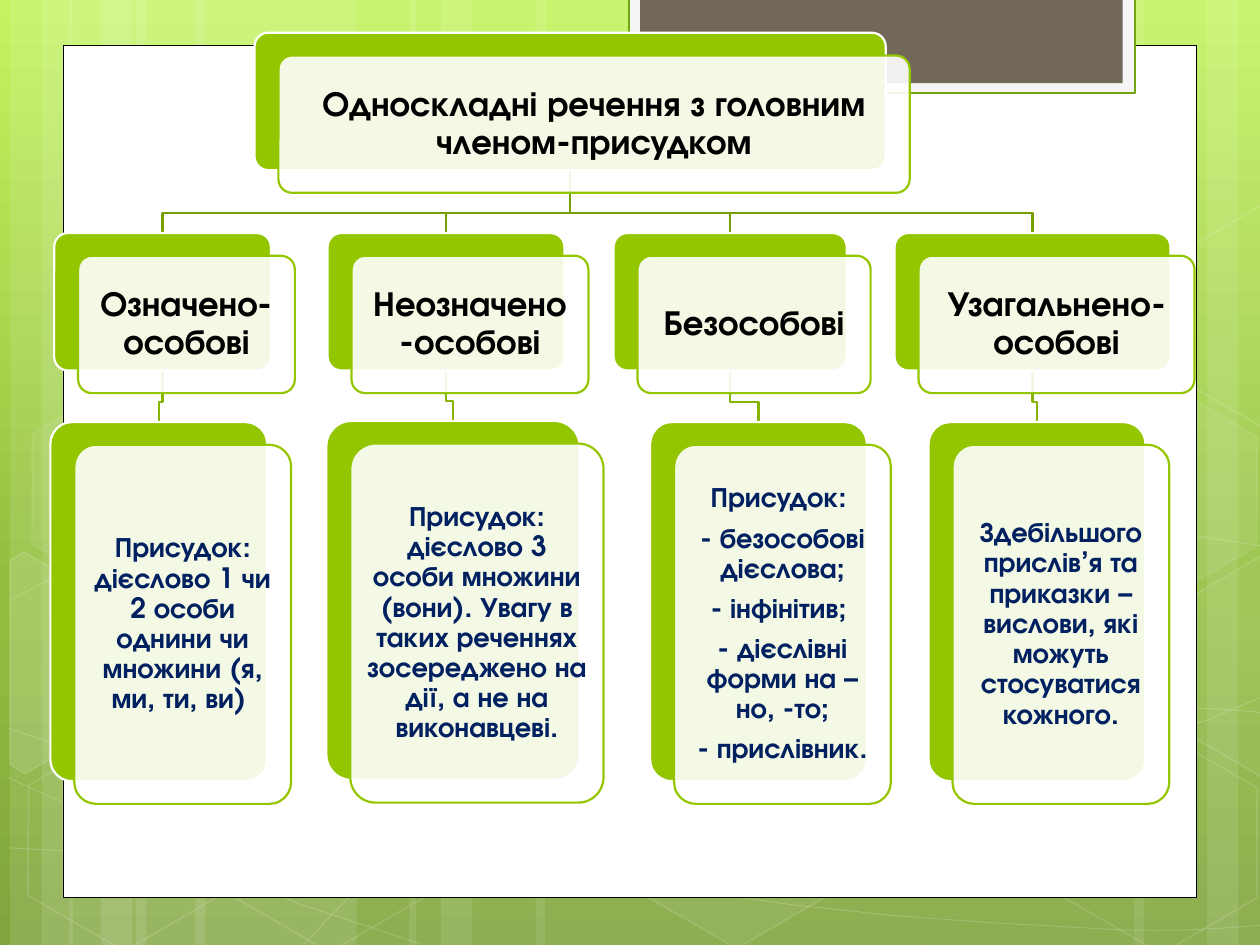
"""Build a slide with a tree of one-member sentence types on a green patterned background."""
import copy
from typing import NamedTuple, Optional

import pptx
import pptx.dml.color
import pptx.enum.shapes
import pptx.enum.text
import pptx.oxml
import pptx.oxml.ns
import pptx.util
from pptx.util import Inches

FONT = "TeX Gyre Adventor"
SHAPE = pptx.enum.shapes.MSO_SHAPE
COLORS = {
    "white": "FFFFFF", "black": "000000", "navy": "002060", "green": "94C600",
    "top_link": "779F00", "low_link": "86B400", "tab": "F5F5F5",
    "tab_line": "74A510", "brown": "71685A",
}
BACKGROUND = [(0, "C3F35F"), (0.62, "93BF3F"), (1, "81A53E")]
STRIPES = [
    (1.08, 1.75), (0.08, 0.5), (0.33, 0.83), (1.55, 1.75), (0.55, 0.5), (0.8, 0.83),
    (7.33, 1.75), (9.58, 0.5), (9, 0.83), (4.25, 3.08), (3.25, 0.5), (3.5, 0.83),
]


class Paint(NamedTuple):
    color: str
    alpha: int = 100
    width: float = 1


class Hexagon(NamedTuple):
    left: float
    top: float
    fill_alpha: int
    line_alpha: int


class Outline(NamedTuple):
    points: list
    fill_alpha: int


class Card(NamedTuple):
    left: float
    top: float
    width: float
    height: float
    size: int
    color: str
    inset: float
    lines: list


class Branch(NamedTuple):
    head: Card
    detail: Card


def head(left: float, width: float, text: str, top: float = 1.85) -> Card:
    return Card(left, top, width, 1.09, 20, "black", 0.1, [text])


def detail(left: float, lines: list, width: float = 1.72, top: float = 3.35) -> Card:
    return Card(left, top, width, 2.85, 16, "navy", 0.07, lines)


CURVES = [
    [(0.07, 6.73), (0.61, 6.76), (1.15, 6.79), (1.9, 6.78), (2.65, 6.77), (3.58, 6.75),
     (4.58, 6.65), (5.58, 6.55), (7, 6.36), (7.92, 6.17), (8.83, 5.98), (9.77, 5.68),
     (10.07, 5.51)],
    [(0.07, 4.77), (0.36, 4.61), (0.65, 4.46), (1.21, 4.31), (1.78, 4.16), (2.59, 3.94),
     (3.47, 3.87), (4.36, 3.8), (5.44, 3.79), (6.54, 3.87), (7.64, 3.95), (9.47, 4.26),
     (10.07, 4.34)],
    [(0.06, 6.17), (1.27, 6.72), (2.47, 7.27), (3.34, 7.49)],
    [(0.07, 5.78), (0.38, 5.89), (0.7, 6), (1.28, 6.16), (1.86, 6.31), (2.73, 6.56),
     (3.57, 6.73), (4.4, 6.9), (5.45, 7.08), (6.28, 7.18), (7.11, 7.29), (8, 7.33),
     (8.53, 7.36), (9.05, 7.4), (9.19, 7.38), (9.45, 7.38), (9.71, 7.37), (9.89, 7.35),
     (10.07, 7.34)],
    [(2.42, 7.49), (2.6, 7.29), (2.78, 7.09), (3.02, 6.91), (3.26, 6.73), (3.6, 6.53),
     (3.88, 6.39), (4.16, 6.25), (4.33, 6.19), (4.7, 6.09), (5.06, 5.99), (5.73, 5.85),
     (6.08, 5.78), (6.44, 5.71), (6.49, 5.71), (6.8, 5.69), (7.11, 5.66), (7.6, 5.63),
     (7.94, 5.62), (8.29, 5.61), (8.86, 5.62), (9.53, 5.62), (9.71, 5.63), (9.88, 5.64),
     (10.06, 5.66)],
]
HEXAGONS = [
    Hexagon(3.34, 0.36, 4, 8), Hexagon(4.97, 5.89, 6, 12), Hexagon(0.11, 5.91, 0, 12),
    Hexagon(0.14, 3.12, 7, 8), Hexagon(1.74, 5.92, 0, 12), Hexagon(7.53, 4.53, 10, 12),
    Hexagon(8.34, 5.93, 0, 12), Hexagon(8.34, 3.14, 7, 8),
]
CUT_HEXAGONS = [
    Outline([(0.08, 4.45), (0.19, 4.38), (0.96, 4.82), (0.95, 5.7), (0.2, 6.14), (0.08, 6.07)], 10),
    Outline([(9.26, 4.85), (10.01, 4.41), (10.09, 4.46), (10.09, 6.13), (10.02, 6.17), (9.26, 5.73)], 4),
    Outline([(9.26, 2.07), (10.01, 1.63), (10.1, 1.68), (10.09, 3.35), (10.02, 3.39), (9.26, 2.95)], 0),
]
ROOT = head(2.02, 5.01, "Односкладні речення з головним членом-присудком", 0.26)
BRANCHES = [
    Branch(head(0.43, 1.72, "Означено-особові"),
           detail(0.4, ["Присудок: дієслово 1 чи 2 особи однини чи множини (я, ми, ти, ви) "])),
    Branch(head(2.6, 1.88, "Неозначено-особові"),
           detail(2.59, ["Присудок: дієслово 3 особи множини (вони). Увагу в таких реченнях "
                         "зосереджено на дії, а не на виконавцеві."], 2.01, 3.34)),
    Branch(head(4.87, 1.85, "Безособові"),
           detail(5.16, ["Присудок: ", "- безособові дієслова;", "- інфінітив; ",
                         "- дієслівні форми на –но, -то;", "- прислівник."])),
    Branch(head(7.1, 2.19, "Узагальнено-особові"),
           detail(7.37, ["Здебільшого прислів’я та приказки – вислови, які можуть "
                         "стосуватися кожного."])),
]


def rgb(value: str) -> pptx.dml.color.RGBColor:
    return pptx.dml.color.RGBColor.from_string(value)


def apply_paint(fill, paint: Optional[Paint]) -> None:
    if paint is None or paint.alpha == 0:
        fill.background()
        return
    fill.solid()
    fill.fore_color.rgb = rgb(COLORS[paint.color])
    if paint.alpha < 100:
        clr = fill._xPr.find(".//" + pptx.oxml.ns.qn("a:srgbClr"))
        alpha = pptx.oxml.parse_xml(f'<a:alpha {pptx.oxml.ns.nsdecls("a")} val="{paint.alpha * 1000}"/>')
        clr.append(alpha)


def style(sp, fill: Optional[Paint], line: Optional[Paint]) -> None:
    sp.shadow.inherit = False
    apply_paint(sp.fill, fill)
    apply_paint(sp.line.fill, line)
    if line:
        sp.line.width = pptx.util.Pt(line.width)


def add_box(s, kind, box: tuple, fill: Optional[Paint], line: Optional[Paint] = None):
    sp = s.shapes.add_shape(kind, *map(Inches, box))
    style(sp, fill, line)
    return sp


def add_outline(s, points: list, line: Paint, fill: Optional[Paint] = None, close: bool = False) -> None:
    pts = [(Inches(x), Inches(y)) for x, y in points]
    builder = s.shapes.build_freeform(*pts[0])
    builder.add_line_segments(pts[1:], close=close)
    style(builder.convert_to_shape(), fill, line)


def smooth(points: list, steps: int = 3) -> list:
    result = [points[0]]
    for i in range(0, len(points) - 1, 3):
        a, b, c, d = points[i:i + 4]
        for t in (k / steps for k in range(1, steps + 1)):
            u = 1 - t
            result.append(tuple(u**3 * a[j] + 3 * u * u * t * b[j] + 3 * u * t * t * c[j] + t**3 * d[j]
                                for j in (0, 1)))
    return result


def add_link(s, parent: Card, child: Card, color: str) -> None:
    x1, x2 = (c.left + c.width / 2 for c in (parent, child))
    bend = child.top - 0.16
    points = [(x1, parent.top + parent.height), (x1, bend), (x2, bend), (x2, child.top)]
    add_outline(s, points, Paint(color, width=1.25))


def add_card(s, card: Card) -> None:
    size = (card.width, card.height)
    back = add_box(s, SHAPE.ROUNDED_RECTANGLE, (card.left, card.top, *size),
                   Paint("green"), Paint("white", width=1.25))
    front = add_box(s, SHAPE.ROUNDED_RECTANGLE, (card.left + 0.19, card.top + 0.18, *size),
                    Paint("white", 90), Paint("green", width=1.25))
    back.adjustments[0] = front.adjustments[0] = 0.1
    tf = front.text_frame
    tf.word_wrap = True
    tf.vertical_anchor = pptx.enum.text.MSO_ANCHOR.MIDDLE
    tf.margin_left = tf.margin_right = tf.margin_top = tf.margin_bottom = Inches(card.inset)
    for i, text in enumerate(card.lines):
        p = tf.add_paragraph() if i else tf.paragraphs[0]
        p.alignment = pptx.enum.text.PP_ALIGN.CENTER
        p.line_spacing = 0.9
        p.space_after = pptx.util.Pt(card.size * 0.35)
        r = p.add_run()
        r.text = text
        r.font.name, r.font.size, r.font.bold = FONT, pptx.util.Pt(card.size), True
        r.font.color.rgb = rgb(COLORS[card.color])


def add_background(s) -> None:
    fill = s.background.fill
    fill.gradient()
    fill.gradient_angle = 270
    stops = s._element.find(".//" + pptx.oxml.ns.qn("a:gsLst"))
    stops.append(copy.deepcopy(stops[0]))
    for stop, (position, color) in zip(fill.gradient_stops, BACKGROUND):
        stop.position = position
        stop.color.rgb = rgb(color)
    for left, width in STRIPES:
        add_box(s, SHAPE.RECTANGLE, (left, 0, width, 7.5), Paint("white", 10))
    for curve in CURVES:
        add_outline(s, smooth(curve), Paint("white", 20, 0.5))
    for h in HEXAGONS:
        sp = add_box(s, SHAPE.HEXAGON, (h.left, h.top, 1.75, 1.52),
                     Paint("white", h.fill_alpha), Paint("white", h.line_alpha))
        sp.adjustments[0] = 0.285
        sp.rotation = 30
    for cut in CUT_HEXAGONS:
        add_outline(s, cut.points, Paint("white", 12), Paint("white", cut.fill_alpha), True)
    add_box(s, SHAPE.RECTANGLE, (0.5, 0.36, 9, 6.76), Paint("white"), Paint("black", width=0.5))
    add_box(s, SHAPE.RECTANGLE, (4.99, -0.02, 4.02, 0.76), Paint("tab"), Paint("tab_line", width=1.25))
    add_box(s, SHAPE.RECTANGLE, (5.08, -0.02, 3.83, 0.68), Paint("brown"))


def main() -> None:
    prs = pptx.Presentation()
    prs.slide_width, prs.slide_height = Inches(10), Inches(7.5)
    s = prs.slides.add_slide(prs.slide_layouts[6])
    add_background(s)
    for branch in reversed(BRANCHES):
        add_link(s, branch.head, branch.detail, "low_link")
        add_link(s, ROOT, branch.head, "top_link")
    add_card(s, ROOT)
    for branch in BRANCHES:
        add_card(s, branch.head)
        add_card(s, branch.detail)
    prs.save("out.pptx")


if __name__ == "__main__":
    main()
